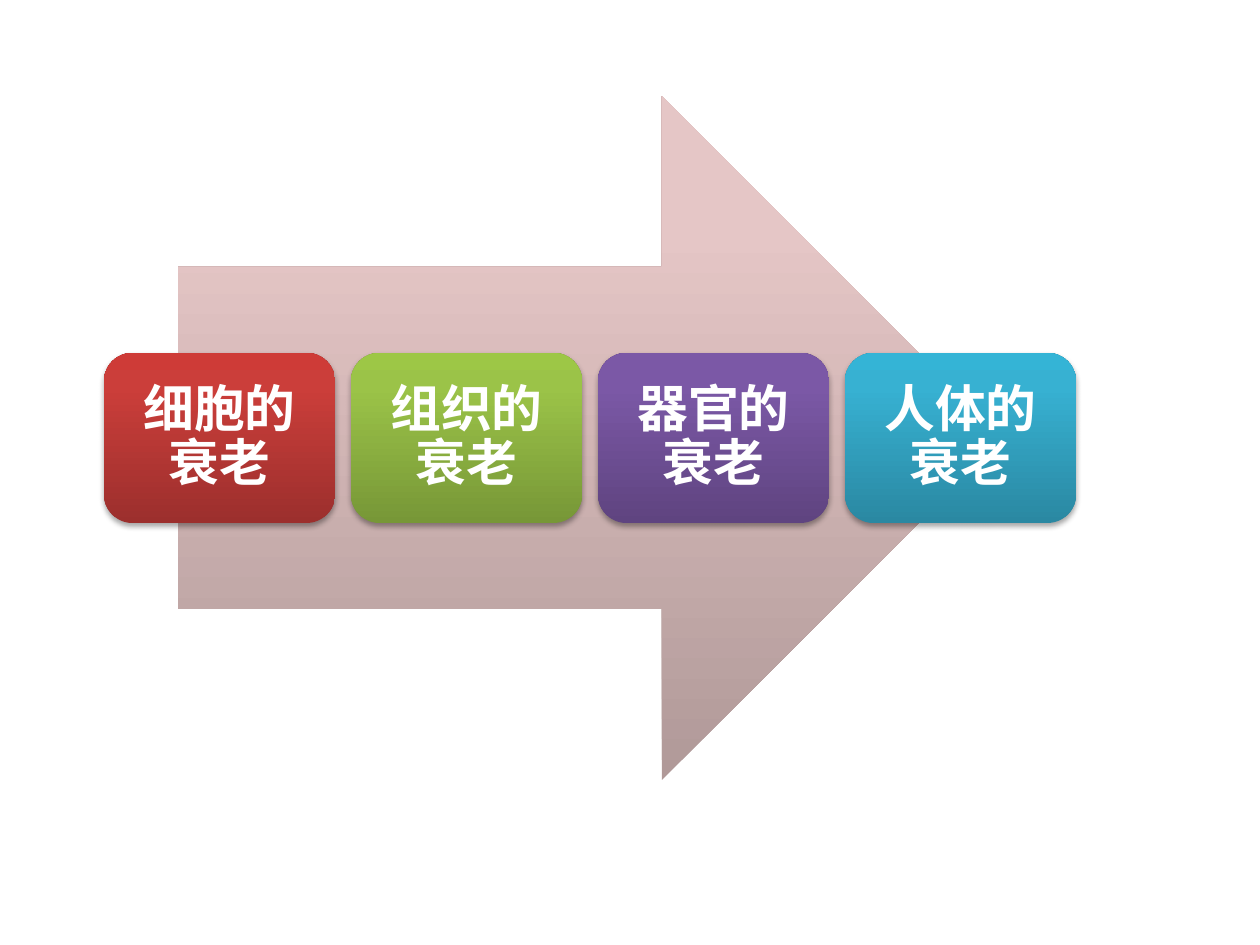
from copy import deepcopy

from lxml.etree import SubElement
from pptx import Presentation
from pptx.dml.color import RGBColor
from pptx.enum.shapes import MSO_SHAPE as Shape
from pptx.enum.text import MSO_ANCHOR as Anchor, PP_ALIGN as Align
from pptx.oxml.ns import qn
from pptx.util import Pt

PX = 914400 / 126
WHITE = RGBColor(0xFF, 0xFF, 0xFF)
# Gradients run from the dark bottom to the light top.
ROSE = RGBColor(0xB0, 0x99, 0x98), RGBColor(0xE5, 0xC6, 0xC6), RGBColor(0xE6, 0xC7, 0xC6)
RED = RGBColor(0x9C, 0x2F, 0x2D), RGBColor(0xCB, 0x3E, 0x3A), RGBColor(0xCE, 0x3B, 0x37)
GREEN = RGBColor(0x77, 0x97, 0x37), RGBColor(0x9B, 0xC3, 0x48), RGBColor(0x9D, 0xC7, 0x46)
PURPLE = RGBColor(0x5F, 0x44, 0x80), RGBColor(0x7B, 0x58, 0xA6), RGBColor(0x7C, 0x57, 0xA8)
TEAL = RGBColor(0x2A, 0x88, 0xA2), RGBColor(0x37, 0xB1, 0xD2), RGBColor(0x34, 0xB4, 0xD6)


def px(length):
    return round(length * PX)


def add_gradient_shape(page, kind, left, top, width, height, colours):
    """Add a borderless shape with a three-stop vertical gradient."""
    shape = page.shapes.add_shape(kind, px(left), px(top), px(width), px(height))
    shape.shadow.inherit = False
    shape.line.fill.background()
    shape.fill.gradient()
    shape.fill.gradient_angle = 90
    stop_list = shape.element.spPr.find(qn("a:gradFill")).find(qn("a:gsLst"))
    stop_list.append(deepcopy(stop_list[-1]))
    for stop, position, colour in zip(shape.fill.gradient_stops, (0, 0.8, 1), colours):
        stop.position = position
        stop.color.rgb = colour
    return shape


deck = Presentation()
deck.slide_width, deck.slide_height = px(1260), px(945)
page = deck.slides.add_slide(deck.slide_layouts[6])

add_gradient_shape(page, Shape.RIGHT_ARROW, 178, 96, 826, 684, ROSE)

STAGES = [
    ("细胞的衰老", RED),
    ("组织的衰老", GREEN),
    ("器官的衰老", PURPLE),
    ("人体的衰老", TEAL),
]
CARD_LEFT, CARD_TOP, CARD_WIDTH, CARD_HEIGHT = 104, 353, 231, 170
CARD_STEP = 247
INSET = 15

for index, (label, colours) in enumerate(STAGES):
    left = CARD_LEFT + index * CARD_STEP
    card = add_gradient_shape(page, Shape.ROUNDED_RECTANGLE, left, CARD_TOP,
                              CARD_WIDTH, CARD_HEIGHT, colours)
    effects = card.element.spPr.find(qn("a:effectLst"))
    shadow = SubElement(effects, qn("a:outerShdw"), blurRad="40000", dist="23000",
                        dir="5400000", rotWithShape="0")
    shadow_colour = SubElement(shadow, qn("a:srgbClr"), val="000000")
    SubElement(shadow_colour, qn("a:alpha"), val="35000")

    frame = card.text_frame
    frame.text = label
    frame.word_wrap = True
    frame.vertical_anchor = Anchor.MIDDLE
    frame.margin_left = frame.margin_right = px(INSET)
    frame.margin_top = frame.margin_bottom = px(INSET)
    para = frame.paragraphs[0]
    para.alignment = Align.CENTER
    para.line_spacing = 0.9
    font = para.runs[0].font
    font.name = "Calibri"
    font.size = Pt(29)
    font.bold = True
    font.color.rgb = WHITE

deck.save("out.pptx")
